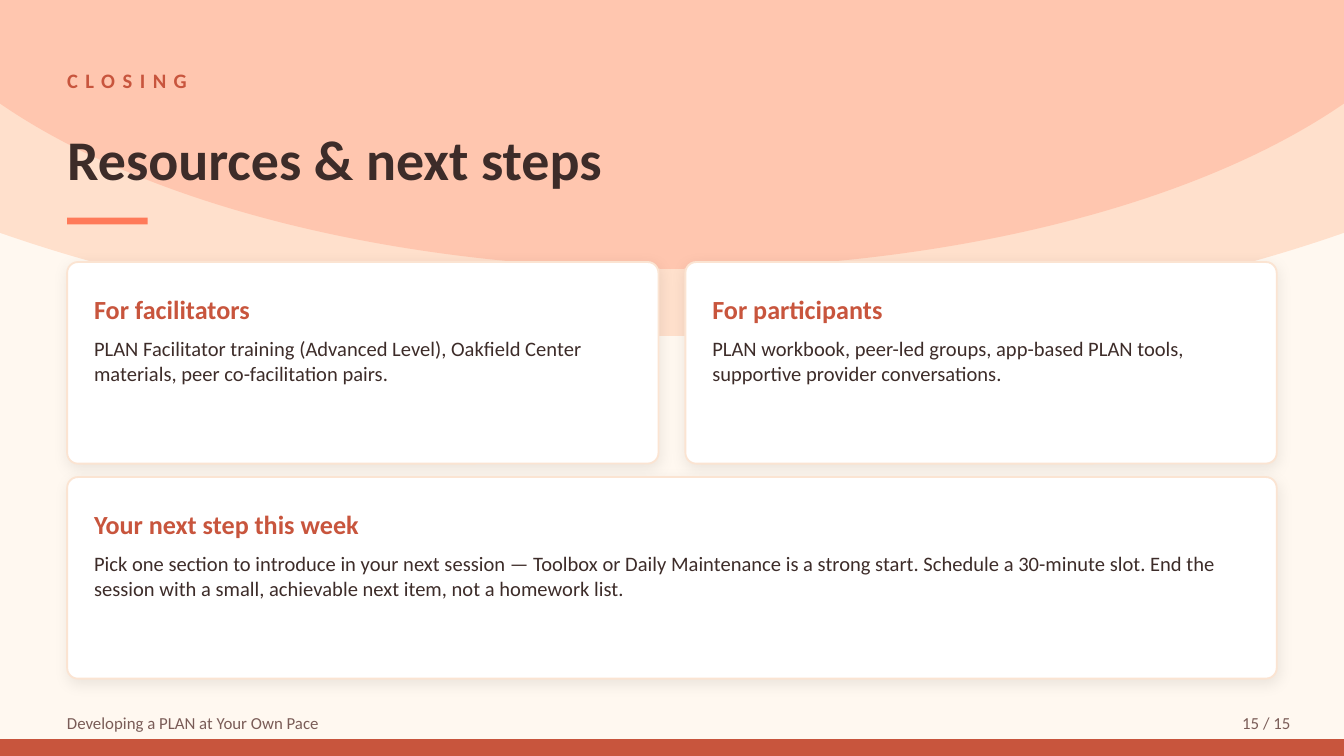
from dataclasses import dataclass

from lxml import etree
from pptx import Presentation
from pptx.dml.color import RGBColor
from pptx.enum.shapes import MSO_SHAPE
from pptx.enum.text import MSO_ANCHOR, MSO_AUTO_SIZE, PP_ALIGN
from pptx.oxml.ns import qn
from pptx.shapes.autoshape import Shape
from pptx.slide import Slide
from pptx.util import Inches, Pt

ELLIPSE, RECTANGLE = MSO_SHAPE.OVAL, MSO_SHAPE.RECTANGLE
ROUNDED = MSO_SHAPE.ROUNDED_RECTANGLE
TOP, MIDDLE = MSO_ANCHOR.TOP, MSO_ANCHOR.MIDDLE
LEFT, RIGHT = PP_ALIGN.LEFT, PP_ALIGN.RIGHT
NO_AUTOFIT = MSO_AUTO_SIZE.NONE

CREAM = RGBColor(0xFF, 0xF8, 0xF0)
PEACH = RGBColor(0xFF, 0xB4, 0x8A)
CORAL = RGBColor(0xFF, 0x7A, 0x59)
RUST = RGBColor(0xC8, 0x55, 0x3D)
BROWN = RGBColor(0x3D, 0x2C, 0x29)
MUTED = RGBColor(0x7A, 0x5C, 0x57)
WHITE = RGBColor(0xFF, 0xFF, 0xFF)
BORDER = RGBColor(0xFB, 0xE4, 0xD2)

FONT = "Calibri"
TITLE_ONLY = 5
SLIDE_WIDTH = 10
SLIDE_HEIGHT = SLIDE_WIDTH * 9 / 16
BAND_TOP = 5.5
MARGIN = 0.5
CONTENT_WIDTH = SLIDE_WIDTH - 2 * MARGIN
CARD_GAP = 0.2
CARD_HEIGHT = 1.5
CARD_PADDING = 0.2
CARD_RADIUS = 0.08
HALF_WIDTH = (CONTENT_WIDTH - CARD_GAP) / 2
ROW_TOPS = (1.95, 3.55)


@dataclass
class Box:
    left: float
    top: float
    width: float
    height: float

    def lengths(self) -> tuple:
        return tuple(Inches(v) for v in (self.left, self.top, self.width, self.height))


@dataclass
class Card:
    box: Box
    heading: str
    body: str


CARDS = (
    Card(Box(MARGIN, ROW_TOPS[0], HALF_WIDTH, CARD_HEIGHT), "For facilitators",
         "PLAN Facilitator training (Advanced Level), Oakfield Center materials, "
         "peer co-facilitation pairs."),
    Card(Box(MARGIN + HALF_WIDTH + CARD_GAP, ROW_TOPS[0], HALF_WIDTH, CARD_HEIGHT),
         "For participants",
         "PLAN workbook, peer-led groups, app-based PLAN tools, "
         "supportive provider conversations."),
    Card(Box(MARGIN, ROW_TOPS[1], CONTENT_WIDTH, CARD_HEIGHT), "Your next step this week",
         "Pick one section to introduce in your next session — Toolbox or Daily "
         "Maintenance is a strong start. Schedule a 30-minute slot. End the session "
         "with a small, achievable next item, not a homework list."),
)


def write_text(shape: Shape, text: str, *, size: float, color: RGBColor,
               bold: bool = False, align: PP_ALIGN = LEFT,
               anchor: MSO_ANCHOR = MIDDLE, inset: bool = False,
               spacing: float = 0) -> None:
    frame = shape.text_frame
    frame.word_wrap = True
    frame.auto_size = NO_AUTOFIT
    frame.vertical_anchor = anchor
    if not inset:
        frame.margin_left = frame.margin_right = 0
        frame.margin_top = frame.margin_bottom = 0
    paragraph = frame.paragraphs[0]
    paragraph.alignment = align
    run = paragraph.add_run()
    run.text = text
    run.font.name = FONT
    run.font.size = Pt(size)
    run.font.bold = bold
    run.font.color.rgb = color
    if spacing:
        run.font._element.set("spc", str(int(spacing * 100)))


def add_text(slide: Slide, box: Box, text: str, **text_format) -> None:
    write_text(slide.shapes.add_textbox(*box.lengths()), text, **text_format)


def set_opacity(color_element: etree._Element, percent: int) -> None:
    etree.SubElement(color_element, qn("a:alpha"), val=str(percent * 1000))


def add_filled(slide: Slide, kind: MSO_SHAPE, box: Box, color: RGBColor,
               opacity: int = 100) -> Shape:
    shape = slide.shapes.add_shape(kind, *box.lengths())
    shape.shadow.inherit = False
    shape.fill.solid()
    shape.fill.fore_color.rgb = color
    shape.line.fill.background()
    if opacity < 100:
        set_opacity(shape._element.spPr.find(".//" + qn("a:srgbClr")), opacity)
    return shape


def add_soft_shadow(shape: Shape) -> None:
    effects = shape._element.spPr.find(qn("a:effectLst"))
    shadow = etree.SubElement(effects, qn("a:outerShdw"), blurRad=str(Pt(8)),
                              dist=str(Pt(2)), dir=str(90 * 60000),
                              algn="ctr", rotWithShape="0")
    set_opacity(etree.SubElement(shadow, qn("a:srgbClr"), val="000000"), 8)


def add_card(slide: Slide, card: Card) -> None:
    box = card.box
    panel = add_filled(slide, ROUNDED, box, WHITE)
    panel.adjustments[0] = CARD_RADIUS / box.height
    panel.line.color.rgb = BORDER
    panel.line.width = Pt(1)
    add_soft_shadow(panel)
    left = box.left + CARD_PADDING
    width = box.width - 2 * CARD_PADDING
    add_text(slide, Box(left, box.top + 0.15, width, 0.4), card.heading,
             size=14, color=RUST, bold=True)
    add_text(slide, Box(left, box.top + 0.55, width, 0.8), card.body,
             size=11, color=BROWN, anchor=TOP)


def main() -> None:
    presentation = Presentation()
    presentation.slide_width = Inches(SLIDE_WIDTH)
    presentation.slide_height = Inches(SLIDE_HEIGHT)
    slide = presentation.slides.add_slide(presentation.slide_layouts[TITLE_ONLY])
    slide.background.fill.solid()
    slide.background.fill.fore_color.rgb = CREAM

    # Backdrop arcs and bottom band
    add_filled(slide, ELLIPSE, Box(-3, -4.5, 16, 7), PEACH, opacity=35)
    add_filled(slide, ELLIPSE, Box(-1, -3.5, 12, 5.5), CORAL, opacity=25)
    add_filled(slide, RECTANGLE,
               Box(0, BAND_TOP, SLIDE_WIDTH, SLIDE_HEIGHT - BAND_TOP), RUST)

    # Footer
    add_text(slide, Box(0.4, 5.25, 6, 0.25), "Developing a PLAN at Your Own Pace",
             size=9, color=MUTED, inset=True)
    add_text(slide, Box(9, 5.25, 0.7, 0.25), "15 / 15",
             size=9, color=MUTED, align=RIGHT, inset=True)

    # Heading, with the title brought in front of the backdrop
    add_text(slide, Box(MARGIN, 0.45, CONTENT_WIDTH, 0.3), "CLOSING",
             size=11, color=RUST, bold=True, spacing=4)
    title = slide.shapes.title
    title.left, title.top, title.width, title.height = Box(
        MARGIN, 0.75, CONTENT_WIDTH, 0.85).lengths()
    write_text(title, "Resources & next steps", size=30, color=BROWN, bold=True)
    title._element.getparent().append(title._element)
    add_filled(slide, RECTANGLE, Box(MARGIN, 1.62, 0.6, 0.05), CORAL)

    # Cards
    for card in CARDS:
        add_card(slide, card)

    presentation.save("out.pptx")


if __name__ == "__main__":
    main()
